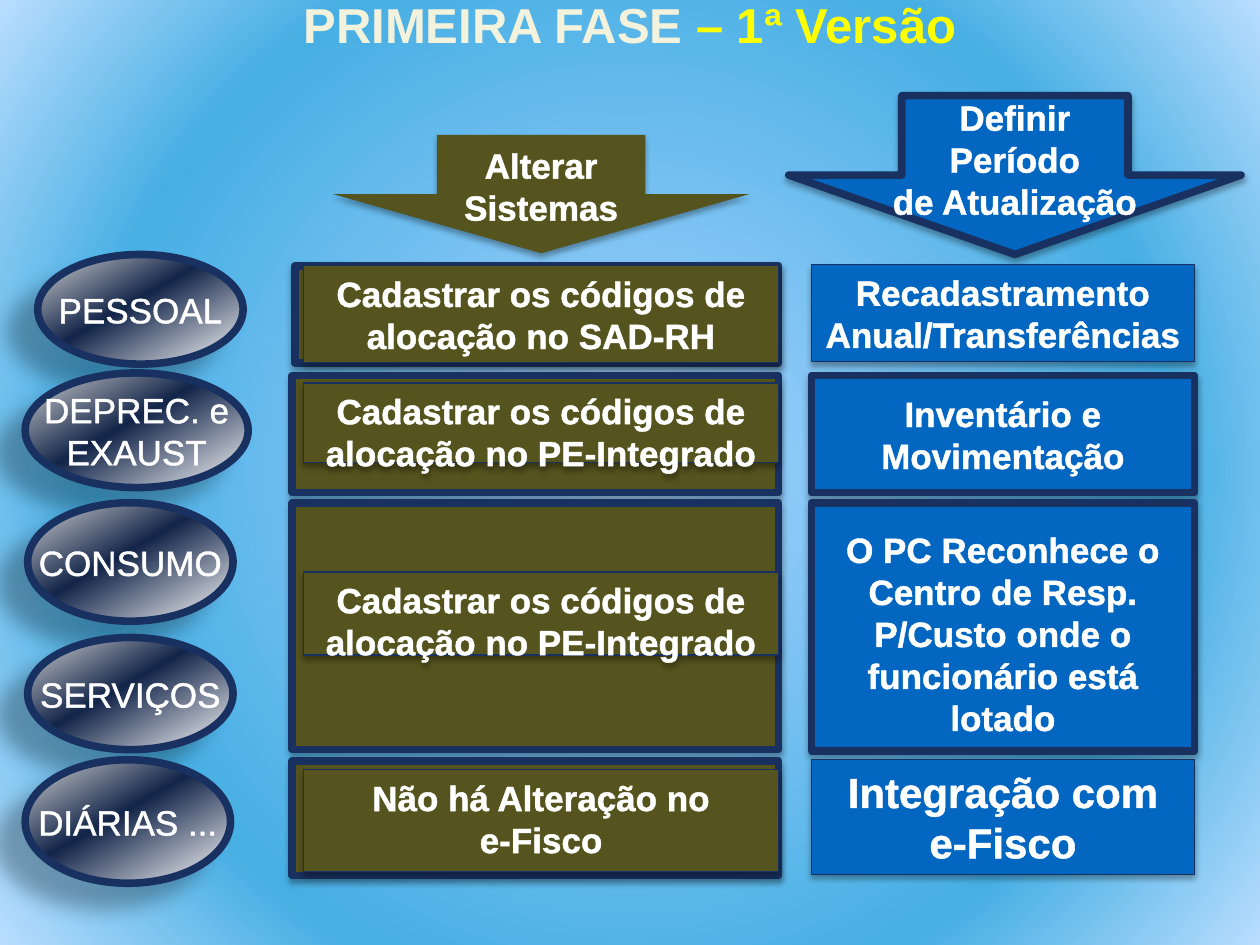
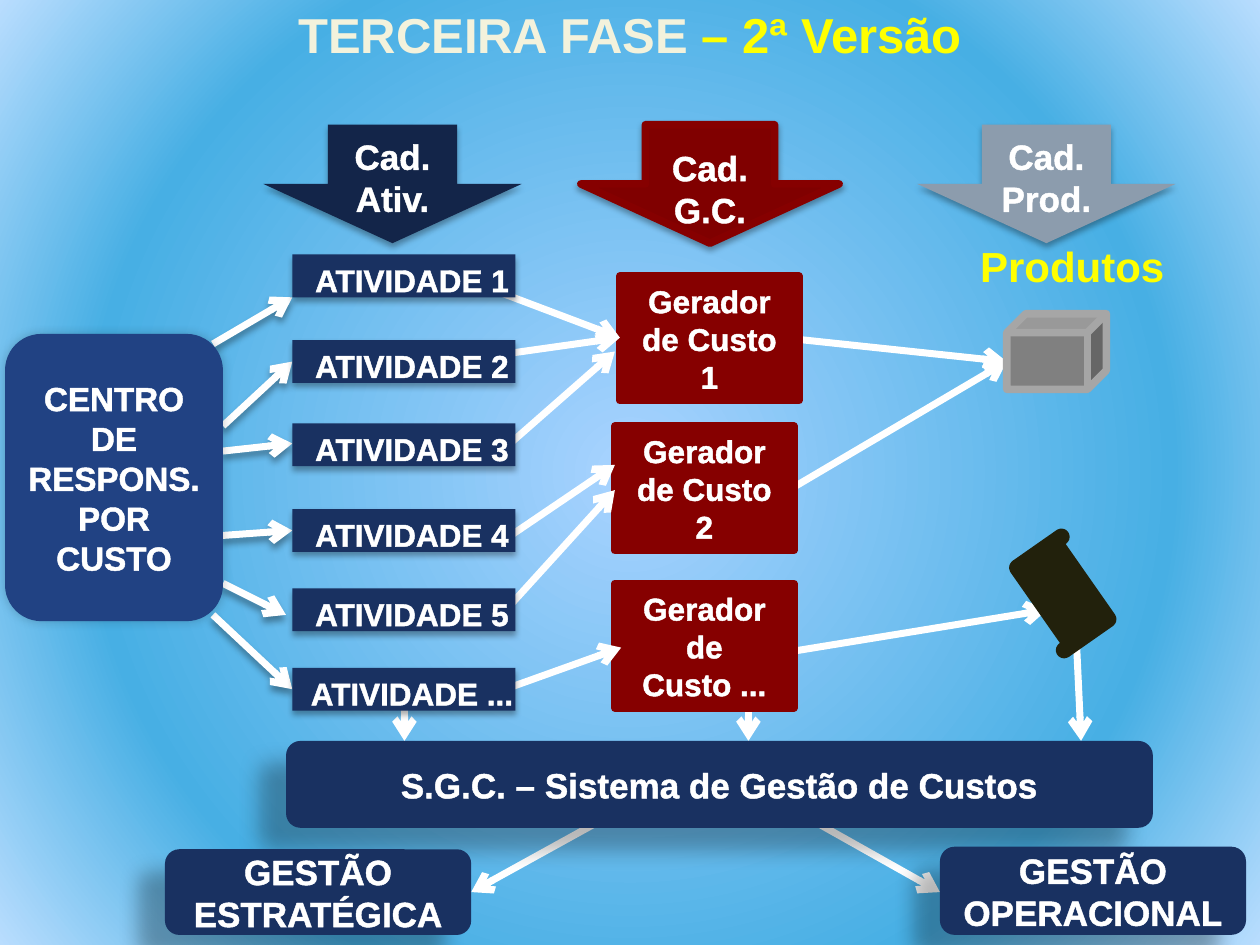
from lxml.etree import SubElement
from pptx import Presentation
from pptx.dml.color import RGBColor
from pptx.enum.shapes import MSO_CONNECTOR, MSO_SHAPE
from pptx.enum.text import MSO_ANCHOR, PP_ALIGN
from pptx.oxml import parse_xml
from pptx.oxml.ns import nsdecls, qn
from pptx.util import Inches, Pt

HUES = {
    "white": "FFFFFF", "cream": "F3F2DC", "yellow": "FFFF00", "navy": "193161",
    "night": "132549", "blue": "0366C0", "royal": "214283", "olive": "56541E",
    "red": "860000", "wine": "800000", "steel": "8C9CAD", "gray": "808080",
    "silver": "A6A6A6", "bark": "22210C",
}
SOFT = (32, 3.5, 2.2, 90)
DEEP = (28, 11.8, 19.7, 141)
LINK = (35, 4, 3, 90)
THICK, THIN = 4.33, 0.75

GRADS = {}
for name, stops, path in (
    ("sky", ((0, "A9D3FF"), (69, "47AFE4"), (100, "B9DDFE")),
     '<a:path path="circle"><a:fillToRect l="50000" t="50000" r="50000" b="50000"/></a:path>'),
    ("metal", ((0, "D7D7D7"), (45, "132549"), (100, "FFFFFF")),
     '<a:lin ang="3600000" scaled="0"/>'),
):
    marks = "".join(f'<a:gs pos="{pos * 1000}"><a:srgbClr val="{hue}"/></a:gs>' for pos, hue in stops)
    GRADS[name] = f'<a:gradFill {nsdecls("a")} rotWithShape="1"><a:gsLst>{marks}</a:gsLst>{path}</a:gradFill>'


def box(slide, kind, at, text=(), fill=None, edge=None, width=THICK, glow=None,
        size=20, bold=True, top=None, side=0.1, wrap=True, hue="white", rim=0.75):
    place = [Inches(n) for n in at]
    if kind is None:
        shape = slide.shapes.add_textbox(*place)
    else:
        shape = slide.shapes.add_shape(kind, *place)
        shape.shadow.inherit = False
        shape.fill.solid()
        if fill in GRADS:
            old = shape._element.spPr.find(qn("a:solidFill"))
            old.getparent().replace(old, parse_xml(GRADS[fill]))
        else:
            shape.fill.fore_color.rgb = RGBColor.from_string(HUES[fill])
        if edge:
            shape.line.color.rgb = RGBColor.from_string(HUES[edge])
            shape.line.width = Pt(width)
        else:
            shape.line.fill.background()
        if glow:
            cast(shape, glow)
    frame = shape.text_frame
    frame.word_wrap = wrap
    frame.vertical_anchor = MSO_ANCHOR.MIDDLE if top is None else MSO_ANCHOR.TOP
    frame.margin_left = frame.margin_right = Inches(side)
    frame.margin_top, frame.margin_bottom = Inches(top or 0), 0
    for i, words in enumerate(text):
        para = frame.add_paragraph() if i else frame.paragraphs[0]
        para.alignment = PP_ALIGN.CENTER
        para.add_run().text = words
        font = para.font
        font.name, font.size, font.bold = "Arial", Pt(size), bold
        font.color.rgb = RGBColor.from_string(HUES[hue])
        if rim:
            line = parse_xml(f'<a:ln {nsdecls("a")} w="{int(Pt(rim))}"><a:solidFill>'
                             f'<a:srgbClr val="{HUES[hue]}"/></a:solidFill></a:ln>')
            para._p.pPr.find(qn("a:defRPr")).insert(0, line)
    return shape


def cast(shape, glow=None):
    props = shape._element.spPr
    list_ = props.find(qn("a:effectLst"))
    if list_ is None:
        list_ = SubElement(props, qn("a:effectLst"))
    if glow:
        alpha, blur, dist, angle = glow
        shade = SubElement(list_, qn("a:outerShdw"), blurRad=str(int(Pt(blur))),
                           dist=str(int(Pt(dist))), dir=str(angle * 60000), rotWithShape="0")
        tint = SubElement(shade, qn("a:srgbClr"), val="000000")
        SubElement(tint, qn("a:alpha"), val=str(alpha * 1000))


deck = Presentation()
deck.slide_width, deck.slide_height = Inches(10), Inches(7.5)
master = deck.slide_master
master.background.fill.solid()
plain = master._element.cSld.find(".//" + qn("a:solidFill"))
plain.getparent().replace(plain, parse_xml(GRADS["sky"]))

pages = []
for phase, stage, high in (("PRIMEIRA FASE ", "– 1ª Versão", 0.38),
                           ("TERCEIRA FASE ", "– 2ª Versão", 0.54)):
    page = deck.slides.add_slide(deck.slide_layouts[6])
    title = box(page, None, (0, 0, 10, high), [phase], size=28, hue="cream", rim=0)
    run = title.text_frame.paragraphs[0].add_run()
    run.text = stage
    run.font.color.rgb = RGBColor.from_string(HUES["yellow"])
    pages.append(page)
first, third = pages

for x, y, w, h, text in (
    (0.3, 2.02, 1.63, 0.87, ["PESSOAL"]),
    (0.2, 2.96, 1.77, 0.91, ["DEPREC. e", "EXAUST"]),
    (0.22, 3.99, 1.63, 0.94, ["CONSUMO"]),
    (0.22, 5.06, 1.63, 0.89, ["SERVIÇOS"]),
    (0.2, 6.03, 1.63, 0.98, ["DIÁRIAS ..."]),
):
    box(first, MSO_SHAPE.OVAL, (x, y, w, h), text, "metal", "navy", glow=DEEP,
        bold=False, wrap=False, side=0, rim=1.45)

for at, text, fill, edge, top in (
    ((2.64, 1.07, 3.31, 0.94), ["Alterar", "Sistemas"], "olive", None, 0.07),
    ((6.26, 0.76, 3.59, 1.26), ["Definir", "Período", "de Atualização"], "blue", "navy", 0),
):
    box(first, MSO_SHAPE.DOWN_ARROW, at, text, fill, edge, glow=SOFT, top=top, wrap=False)

stock = ["Cadastrar os códigos de alocação no PE-Integrado"]
for x, y, h, lift, tall, text in (
    (2.34, 2.11, 0.77, 2.11, 0.77, ["Cadastrar os códigos de alocação no SAD-RH"]),
    (2.32, 2.98, 0.93, 3.04, 0.63, stock),
    (2.32, 3.99, 1.96, 4.54, 0.66, stock),
    (2.32, 6.04, 0.91, 6.11, 0.81, ["Não há Alteração no", "e-Fisco"]),
):
    box(first, MSO_SHAPE.RECTANGLE, (x, y, 6.18 - x, h), (), "olive", "navy", glow=SOFT)
    box(first, MSO_SHAPE.RECTANGLE, (2.41, lift, 3.77, tall), text, "olive", "navy",
        THIN, SOFT, top=0.05)

for y, h, width, size, top, text in (
    (2.1, 0.77, THIN, 20, 0.05, "Recadastramento Anual/Transferências"),
    (2.98, 0.93, THICK, 20, None, "Inventário e Movimentação"),
    (3.99, 1.97, THICK, 20, 0.2, "O PC Reconhece o Centro de Resp. P/Custo onde o funcionário está lotado"),
    (6.03, 0.91, THIN, 24, 0.05, "Integração com e-Fisco"),
):
    box(first, MSO_SHAPE.RECTANGLE, (6.44, y, 3.04, h), [text], "blue", "navy",
        width, SOFT, size, top=top)

flows = {
    "out": ((6.34, 6.45, 7.46, 7.08), (4.88, 6.45, 3.74, 7.08), (8.54, 5.02, 8.58, 5.88),
            (5.94, 5.48, 5.94, 5.88), (3.21, 5.48, 3.21, 5.88), (6.3, 2.69, 7.99, 2.87),
            (6.26, 3.89, 7.99, 2.87), (6.1, 5.2, 8.31, 4.84)),
    "start": ((1.69, 2.73, 2.32, 2.36), (1.77, 3.38, 2.32, 2.87), (1.77, 3.58, 2.32, 3.52),
              (1.76, 4.25, 2.32, 4.21), (1.77, 4.63, 2.27, 4.88), (1.69, 4.88, 2.32, 5.47)),
    "cost": ((3.7, 2.22, 4.92, 2.68), (3.58, 2.87, 4.92, 2.68), (3.98, 3.58, 4.88, 2.79),
             (3.98, 4.3, 4.88, 3.69), (3.98, 4.88, 4.88, 3.89), (3.98, 5.48, 4.93, 5.14)),
}
for part, ends in flows.items():
    for end in ends:
        link = third.shapes.add_connector(MSO_CONNECTOR.STRAIGHT, *[Inches(n) for n in end])
        link.line.color.rgb = RGBColor.from_string(HUES["white"])
        link.line.width = Pt(4)
        SubElement(link.line._get_or_add_ln(), qn("a:tailEnd"), type="arrow")
        cast(link, LINK if part == "start" else None)
    if part == "out":
        for x, y, mark in ((4.92, 2.19, "1"), (4.88, 3.38, "2"), (4.88, 4.63, "...")):
            box(third, MSO_SHAPE.RECTANGLE, (x, y, 1.42, 0.99), [f"Gerador de Custo {mark}"],
                "red", "red", size=18)

label = box(third, None, (7.68, 1.86, 1.81, 0.5), ["Produtos"], size=24, hue="yellow")
label.text_frame.paragraphs[0].alignment = PP_ALIGN.LEFT
box(third, MSO_SHAPE.CUBE, (7.99, 2.49, 0.79, 0.6), (), "gray", "silver")
scroll = box(third, MSO_SHAPE.VERTICAL_SCROLL, (8.15, 4.3, 0.57, 0.82), (), "bark", "bark")
scroll.rotation = 325

box(third, MSO_SHAPE.ROUNDED_RECTANGLE, (0.04, 2.65, 1.73, 2.28),
    ["CENTRO DE RESPONS. POR CUSTO"], "royal", glow=(20, 6, 0, 225), size=19, side=0.05)

for y, mark in zip((2.02, 2.7, 3.36, 4.04, 4.67, 5.3), (1, 2, 3, 4, 5, "...")):
    task = box(third, MSO_SHAPE.RECTANGLE, (2.32, y, 1.77, 0.34), [f"ATIVIDADE {mark}"],
               "navy", glow=SOFT, size=18, top=0.05, side=0, wrap=False)
    task.text_frame.margin_left = Inches(0.13)

for x, text, fill, edge, top in (
    (2.09, "Ativ.", "night", None, 0.08),
    (4.61, "G.C.", "wine", "red", 0.17),
    (7.28, "Prod.", "steel", None, 0.08),
):
    box(third, MSO_SHAPE.DOWN_ARROW, (x, 0.99, 2.05, 0.94), ["Cad.", text], fill, edge,
        glow=SOFT, top=top, wrap=False)

for at, text in (
    ((2.27, 5.88, 6.88, 0.69), "S.G.C. – Sistema de Gestão de Custos"),
    ((1.31, 6.74, 2.43, 0.68), "GESTÃO ESTRATÉGICA"),
    ((7.46, 6.72, 2.43, 0.7), "GESTÃO OPERACIONAL"),
):
    box(third, MSO_SHAPE.ROUNDED_RECTANGLE, at, [text], "navy", glow=DEEP)

deck.save("out.pptx")
